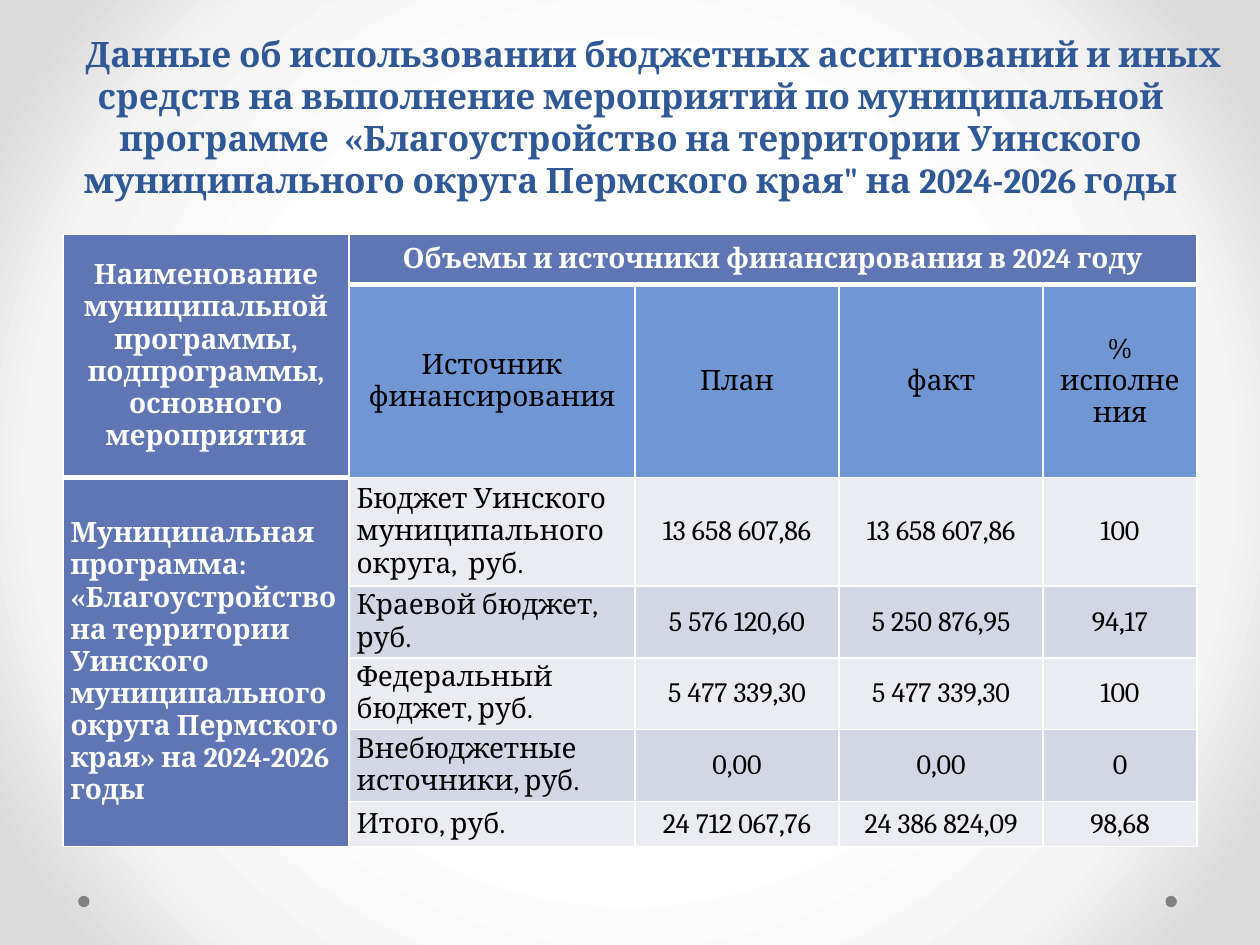
from lxml.etree import SubElement, fromstring
from pptx import Presentation
from pptx.dml.color import RGBColor
from pptx.enum.shapes import MSO_SHAPE
from pptx.enum.text import MSO_ANCHOR, MSO_AUTO_SIZE, PP_ALIGN
from pptx.oxml.ns import nsdecls, qn
from pptx.util import Inches, Pt

FONT = "Cambria"
WHITE = RGBColor(0xFF, 0xFF, 0xFF)
BLACK = RGBColor(0, 0, 0)
GREY = RGBColor(0x80, 0x80, 0x80)
TITLE_BLUE = RGBColor(0x2F, 0x58, 0x97)
HEAD_BLUE = RGBColor(0x60, 0x76, 0xB4)
SUBHEAD_BLUE = RGBColor(0x70, 0x97, 0xD3)
BANDS = [RGBColor(0xEA, 0xEC, 0xF2), RGBColor(0xD2, 0xD6, 0xE5)]
BACKGROUND_STOPS = [(50, "FFFFFF"), (76, "F4F4F4"), (92, "DADADA")]

TITLE = (
    "Данные об использовании бюджетных ассигнований и иных средств на выполнение "
    "мероприятий по муниципальной программе  «Благоустройство на территории Уинского "
    'муниципального округа Пермского края" на 2024-2026 годы'
)
ROWS = [
    ["Наименование муниципальной программы, подпрограммы, основного мероприятия",
     "Объемы и источники финансирования в 2024 году", "", "", ""],
    ["", "Источник финансирования", "План", "факт", "% исполнения"],
    ["Муниципальная программа: «Благоустройство на территории Уинского "
     "муниципального округа Пермского края» на 2024-2026 годы",
     "Бюджет Уинского муниципального округа,  руб.", "13 658 607,86", "13 658 607,86", "100"],
    ["", "Краевой бюджет, руб.", "5 576 120,60", "5 250 876,95", "94,17"],
    ["", "Федеральный бюджет, руб.", "5 477 339,30", "5 477 339,30", "100"],
    ["", "Внебюджетные источники, руб.", "0,00", "0,00", "0"],
    ["", "Итого, руб.", "24 712 067,76", "24 386 824,09", "98,68"],
]
COLUMN_WIDTHS = [2.27, 2.27, 1.62, 1.62, 1.22]
ROW_HEIGHTS = [0.4, 1.31, 0.86, 0.57, 0.57, 0.57, 0.36]
MERGES = [((0, 0), (1, 0)), ((0, 1), (0, 4)), ((2, 0), (6, 0))]
DOT_LEFTS = [0.62, 9.25]


def paint_background(slide):
    fill = slide.background.fill
    fill.gradient()
    gradient = slide._element.find(".//" + qn("a:gradFill"))
    for part in list(gradient):
        gradient.remove(part)
    stops = SubElement(gradient, qn("a:gsLst"))
    for position, color in BACKGROUND_STOPS:
        stop = SubElement(stops, qn("a:gs"), pos=str(position * 1000))
        SubElement(stop, qn("a:srgbClr"), val=color)
    circle = SubElement(gradient, qn("a:path"), path="circle")
    SubElement(circle, qn("a:fillToRect"), l="50000", t="50000", r="50000", b="50000")


def set_borders(cell, bottom):
    properties = cell._tc.get_or_add_tcPr()
    widths = {"lnL": 1, "lnR": 1, "lnT": 1, "lnB": bottom}
    for index, (side, width) in enumerate(widths.items()):
        properties.insert(index, fromstring(
            f'<a:{side} {nsdecls("a")} w="{Pt(width)}"><a:solidFill>'
            f'<a:srgbClr val="{WHITE}"/></a:solidFill></a:{side}>'))


def format_cell(cell, row, column):
    heading = row == 0 or column == 0
    cell.fill.solid()
    if heading:
        cell.fill.fore_color.rgb = HEAD_BLUE
    else:
        cell.fill.fore_color.rgb = SUBHEAD_BLUE if row == 1 else BANDS[row % 2]
    cell.vertical_anchor = MSO_ANCHOR.MIDDLE
    cell.margin_left = cell.margin_right = Inches(0.06)
    cell.margin_top = cell.margin_bottom = 0
    paragraph = cell.text_frame.paragraphs[0]
    paragraph.alignment = PP_ALIGN.LEFT if row > 1 and column < 2 else PP_ALIGN.CENTER
    paragraph.font.name = FONT
    paragraph.font.size = Pt(16)
    paragraph.font.bold = heading
    paragraph.font.color.rgb = WHITE if heading else BLACK
    set_borders(cell, 3 if row == 0 or (row, column) == (1, 0) else 1)


def add_title(slide):
    title = slide.shapes.title
    title.left, title.top = Inches(0.2), Inches(0.21)
    title.width, title.height = Inches(9.61), Inches(1.45)
    frame = title.text_frame
    frame.text = TITLE
    frame.word_wrap = True
    frame.auto_size = MSO_AUTO_SIZE.NONE
    frame.vertical_anchor = MSO_ANCHOR.TOP
    paragraph = frame.paragraphs[0]
    paragraph.alignment = PP_ALIGN.CENTER
    paragraph._p.get_or_add_pPr().set("indent", str(Inches(0.36)))
    paragraph.font.name = FONT
    paragraph.font.size = Pt(20)
    paragraph.font.bold = True
    paragraph.font.color.rgb = TITLE_BLUE


def add_budget_table(slide):
    table = slide.shapes.add_table(
        len(ROWS), len(COLUMN_WIDTHS), Inches(0.5), Inches(1.86),
        Inches(sum(COLUMN_WIDTHS)), Inches(sum(ROW_HEIGHTS))).table
    for column, width in zip(table.columns, COLUMN_WIDTHS):
        column.width = Inches(width)
    for row, height in zip(table.rows, ROW_HEIGHTS):
        row.height = Inches(height)
    for start, end in MERGES:
        table.cell(*start).merge(table.cell(*end))
    for row, texts in enumerate(ROWS):
        for column, text in enumerate(texts):
            cell = table.cell(row, column)
            cell.text = text
            format_cell(cell, row, column)


def add_dots(slide):
    for left in DOT_LEFTS:
        dot = slide.shapes.add_shape(
            MSO_SHAPE.OVAL, Inches(left), Inches(7.11), Inches(0.09), Inches(0.09))
        dot.shadow.inherit = False
        dot.fill.solid()
        dot.fill.fore_color.rgb = GREY
        dot.line.fill.background()


def main():
    deck = Presentation()
    deck.slide_width, deck.slide_height = Inches(10), Inches(7.5)
    slide = deck.slides.add_slide(deck.slide_layouts[5])
    paint_background(slide)
    add_dots(slide)
    add_title(slide)
    add_budget_table(slide)
    deck.save("out.pptx")


if __name__ == "__main__":
    main()
